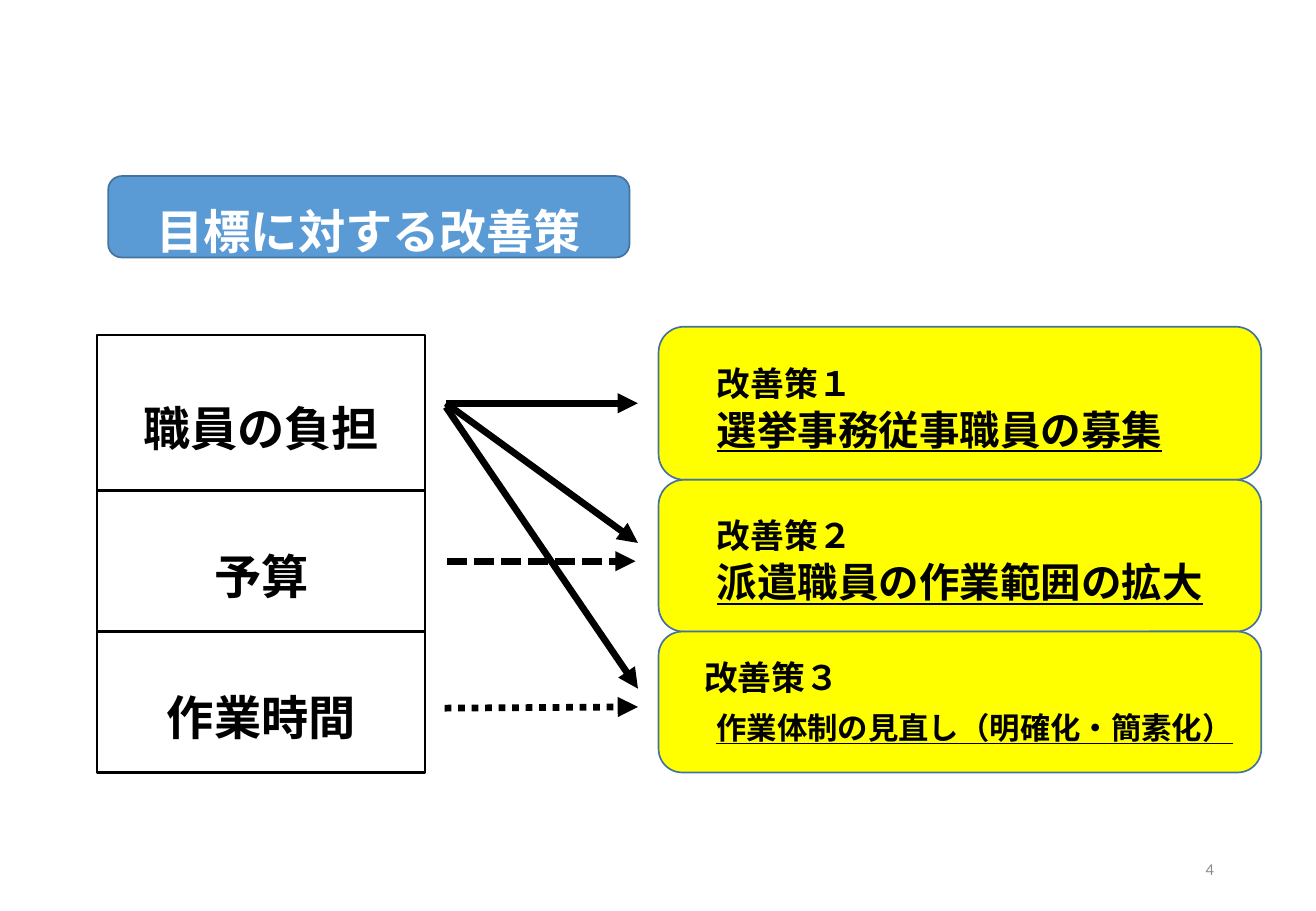
"""Build the slide linking three burdens to three improvement measures."""
from lxml import etree
from pptx import Presentation, util as u
from pptx.dml.color import RGBColor
from pptx.enum import dml, shapes, text
from pptx.oxml.ns import qn

C = {"blue": "5B9BD5", "edge": "43739E", "yellow": "FFFF00",
     "black": "000000", "white": "FFFFFF", "grey": "8C8C8C"}
JP = "Noto Sans CJK JP"
BOX, CARD = shapes.MSO_SHAPE.RECTANGLE, shapes.MSO_SHAPE.FLOWCHART_ALTERNATE_PROCESS
SQUARE, DOT = dml.MSO_LINE.SQUARE_DOT, dml.MSO_LINE.ROUND_DOT


def add_box(kind, left, top, width, height, fill, line, weight):
    sp = s.shapes.add_shape(kind, u.Inches(left), u.Inches(top), u.Inches(width), u.Inches(height))
    sp.shadow.inherit = False
    sp.fill.solid()
    sp.fill.fore_color.rgb = RGBColor.from_string(C[fill])
    sp.line.color.rgb = RGBColor.from_string(C[line])
    sp.line.width = u.Pt(weight)
    sp.text_frame.word_wrap = True
    sp.text_frame.vertical_anchor = text.MSO_ANCHOR.MIDDLE
    return sp


def add_run(p, words, size, color="black", bold=True, font=JP):
    r = p.add_run()
    r.text = words
    r.font.size, r.font.bold, r.font.name = u.Pt(size), bold, font
    r.font.color.rgb = RGBColor.from_string(C[color])
    etree.SubElement(r._r.get_or_add_rPr(), qn("a:ea"), typeface=font)
    return r


prs = Presentation()
prs.slide_width, prs.slide_height = u.Inches(10.83), u.Inches(7.5)
s = prs.slides.add_slide(prs.slide_layouts[5])

banner = add_box(shapes.MSO_SHAPE.ROUNDED_RECTANGLE, 0.89, 1.45, 4.29, 0.67, "blue", "edge", 1)
title = s.shapes.title
title.left, title.top, title.width, title.height = banner.left, banner.top, banner.width, banner.height
s.shapes._spTree.append(title._element)
tf = title.text_frame
tf.auto_size = text.MSO_AUTO_SIZE.NONE
tf.vertical_anchor = text.MSO_ANCHOR.MIDDLE
p = tf.paragraphs[0]
p.alignment, p.line_spacing = text.PP_ALIGN.CENTER, 1.5
add_run(p, "目標に対する改善策", 28, "white")

burden_rows = [2.76, 4.04, 5.2, 6.36]
for label, top, bottom in zip(["職員の負担", "予算", "作業時間"], burden_rows, burden_rows[1:]):
    sp = add_box(BOX, 0.8, top, 2.7, bottom - top, "white", "black", 1.5)
    p = sp.text_frame.paragraphs[0]
    p.alignment, p.line_spacing = text.PP_ALIGN.CENTER, 1.5
    add_run(p, label, 28)

card_rows = [2.69, 3.95, 5.2, 6.36]
measures = [
    ("改善策１", "選挙事務従事職員の募集", 24, 0.32, 1, 0.13, 0.05),
    ("改善策２", "派遣職員の作業範囲の拡大", 24, 0.32, 1, 0.13, 0.05),
    ("改善策３", "作業体制の見直し（明確化・簡素化）", 18, 0.22, 7, 0.05, 0.07),
]
for measure, top, bottom in zip(measures, card_rows, card_rows[1:]):
    name, action, size, indent, gap, pad_top, pad_bottom = measure
    sp = add_box(CARD, 5.42, top, 4.96, bottom - top, "yellow", "edge", 1)
    tf = sp.text_frame
    tf.margin_top, tf.margin_bottom = u.Inches(pad_top), u.Inches(pad_bottom)
    heading, detail = tf.paragraphs[0], tf.add_paragraph()
    for p, left in ((heading, indent), (detail, 0.32)):
        p.alignment = text.PP_ALIGN.LEFT
        p._p.get_or_add_pPr().set("marL", str(u.Inches(left)))
    heading.space_after = u.Pt(gap)
    add_run(heading, name, 20)
    add_run(detail, action, size).font.underline = True

arrows = [
    (3.67, 3.32, 5.25, 3.32, None),
    (3.67, 3.32, 5.25, 4.47, None),
    (3.67, 3.35, 5.25, 5.67, None),
    (3.68, 4.62, 5.23, 4.62, SQUARE),
    (3.66, 5.83, 5.25, 5.82, DOT),
]
for *ends, dash in arrows:
    cn = s.shapes.add_connector(shapes.MSO_CONNECTOR.STRAIGHT, *map(u.Inches, ends))
    cn.line.color.rgb = RGBColor.from_string(C["black"])
    cn.line.width = u.Pt(4)
    if dash:
        cn.line.dash_style = dash
    etree.SubElement(cn.line._get_or_add_ln(), qn("a:tailEnd"), type="triangle")
    etree.SubElement(cn._element.spPr, qn("a:effectLst"))

tb = s.shapes.add_textbox(u.Inches(7.65), u.Inches(6.95), u.Inches(2.44), u.Inches(0.4))
tf = tb.text_frame
tf.word_wrap, tf.vertical_anchor = True, text.MSO_ANCHOR.MIDDLE
p = tf.paragraphs[0]
p.alignment = text.PP_ALIGN.RIGHT
add_run(p, "4", 9.8, "grey", False, "Calibri")

prs.save("out.pptx")
